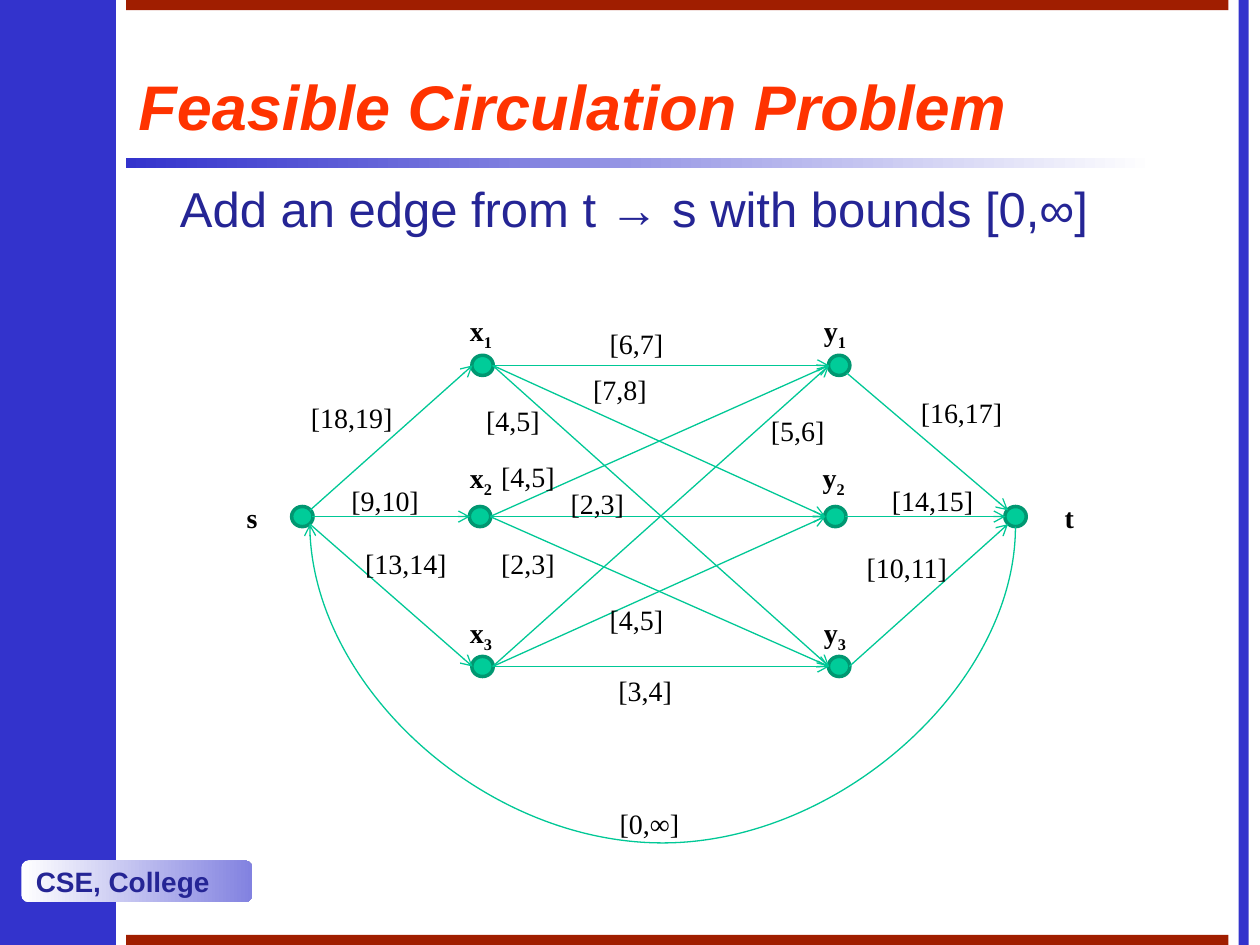
from typing import NamedTuple

from lxml.etree import SubElement
from pptx import Presentation
from pptx.dml.color import RGBColor
from pptx.enum.shapes import MSO_CONNECTOR as Connector, MSO_SHAPE as Shape
from pptx.enum.text import MSO_ANCHOR as Anchor, MSO_AUTO_SIZE as AutoSize, PP_ALIGN as Align
from pptx.oxml.ns import qn
from pptx.util import Inches, Pt

BLUE, RED, WHITE, NAVY = "3333CC", "A01E00", "FFFFFF", "252595"
NODE_WIDTH, NODE_HEIGHT = 0.17, 0.16


class Panel(NamedTuple):
    left: float
    top: float
    width: float
    height: float
    colors: tuple[str, ...]
    kind: Shape = Shape.RECTANGLE


class Style(NamedTuple):
    size: float
    font: str
    color: str
    bold: bool = False
    italic: bool = False


class Node(NamedTuple):
    x: float
    y: float
    name: str
    label_left: float
    label_top: float


class Edge(NamedTuple):
    source: str
    target: str
    exit: str = "right"
    entry: str = "left"


class Bound(NamedTuple):
    text: str
    left: float
    top: float
    width: float = 0.63


TITLE = Style(36, "Arial", "FF3300", True, True)
BODY = Style(28, "Arial", NAVY)
BADGE = Style(16, "Arial", NAVY, True)
BOUND = Style(16, "Times New Roman", "000000")
NAME = BOUND._replace(bold=True)

PANELS = [
    Panel(0, 0, 0.92, 7.5, (BLUE,)),
    Panel(1, 1.25, 8.17, 0.08, (BLUE, WHITE)),
    Panel(9.83, 0, 0.08, 7.5, (BLUE,)),
    Panel(1, 0, 8.75, 0.08, (RED,)),
    Panel(1, 7.42, 8.75, 0.08, (RED,)),
]
BADGE_PANEL = Panel(0.17, 6.83, 1.83, 0.33, (WHITE, "8282E0"), Shape.ROUNDED_RECTANGLE)

NODES = {
    node.name: node
    for node in [
        Node(2.4, 4.1, "s", 1.86, 3.92),
        Node(3.83, 2.9, "x1", 3.63, 2.44),
        Node(3.81, 4.1, "x2", 3.63, 3.61),
        Node(3.83, 5.29, "x3", 3.63, 4.84),
        Node(6.66, 2.9, "y1", 6.44, 2.44),
        Node(6.63, 4.1, "y2", 6.43, 3.61),
        Node(6.66, 5.29, "y3", 6.44, 4.84),
        Node(8.06, 4.1, "t", 8.35, 3.92),
    ]
}
PORTS = {
    "left": (-0.08, 0),
    "right": (0.08, 0),
    "upper left": (-0.06, -0.05),
    "upper right": (0.06, -0.05),
    "lower left": (-0.06, 0.06),
    "lower right": (0.06, 0.06),
}
EDGES = [
    Edge("s", "x1", "upper right"),
    Edge("s", "x2"),
    Edge("s", "x3", "lower right"),
    *(Edge(f"x{i}", f"y{j}") for i in (1, 2, 3) for j in (1, 2, 3)),
    Edge("y1", "t", "lower right", "upper left"),
    Edge("y2", "t"),
    Edge("y3", "t", "right", "lower left"),
]
BOUNDS = [
    Bound("[18,19]", 2.37, 3.13, 0.86),
    Bound("[9,10]", 2.69, 3.79, 0.75),
    Bound("[13,14]", 2.8, 4.29, 0.86),
    Bound("[16,17]", 7.21, 3.09, 0.86),
    Bound("[14,15]", 6.98, 3.79, 0.86),
    Bound("[10,11]", 6.78, 4.32, 0.86),
    Bound("[6,7]", 4.74, 2.54),
    Bound("[3,4]", 4.81, 5.3),
    Bound("[7,8]", 4.61, 2.91),
    Bound("[4,5]", 3.76, 3.15),
    Bound("[4,5]", 3.88, 3.6),
    Bound("[2,3]", 4.43, 3.81),
    Bound("[5,6]", 6.02, 3.23),
    Bound("[2,3]", 3.88, 4.29),
    Bound("[4,5]", 4.74, 4.73),
    Bound("[0,∞]", 4.82, 6.35, 0.7),
]


def rgb(color: str) -> RGBColor:
    return RGBColor.from_string(color)


def style_run(run, style: Style) -> None:
    font = run.font
    font.size, font.name = Pt(style.size), style.font
    font.bold, font.italic = style.bold, style.italic
    font.color.rgb = rgb(style.color)


def add_panel(slide, panel: Panel):
    shape = slide.shapes.add_shape(panel.kind, *map(Inches, panel[:4]))
    shape.shadow.inherit = False
    shape.line.fill.background()
    if len(panel.colors) == 1:
        shape.fill.solid()
        shape.fill.fore_color.rgb = rgb(panel.colors[0])
    else:
        shape.fill.gradient()
        shape.fill.gradient_angle = 0
        for stop, position, color in zip(shape.fill.gradient_stops, (0, 1), panel.colors):
            stop.position = position
            stop.color.rgb = rgb(color)
    return shape


def add_badge(slide, text: str) -> None:
    shape = add_panel(slide, BADGE_PANEL)
    shape.adjustments[0] = 0.167
    frame = shape.text_frame
    frame.text = text
    frame.word_wrap = False
    frame.vertical_anchor = Anchor.MIDDLE
    paragraph = frame.paragraphs[0]
    paragraph.alignment = Align.LEFT
    style_run(paragraph.runs[0], BADGE)


def add_text(slide, text: str, box: tuple, style: Style, wrap: bool = False):
    frame = slide.shapes.add_textbox(*map(Inches, box)).text_frame
    frame.text = text
    frame.word_wrap = wrap
    frame.auto_size = AutoSize.SHAPE_TO_FIT_TEXT
    style_run(frame.paragraphs[0].runs[0], style)
    return frame


def add_node(slide, node: Node) -> None:
    left, top = node.x - NODE_WIDTH / 2, node.y - NODE_HEIGHT / 2
    box = map(Inches, (left, top, NODE_WIDTH, NODE_HEIGHT))
    shape = slide.shapes.add_shape(Shape.OVAL, *box)
    shape.shadow.inherit = False
    shape.fill.solid()
    shape.fill.fore_color.rgb = rgb("00CC99")
    shape.line.color.rgb = rgb("009771")
    shape.line.width = Pt(2)


def add_node_name(slide, node: Node) -> None:
    letter, index = node.name[0], node.name[1:]
    box = (node.label_left, node.label_top, 0.39 if index else 0.29, 0.37)
    frame = add_text(slide, letter, box, NAME)
    if index:
        run = frame.paragraphs[0].add_run()
        run.text = index
        style_run(run, NAME)
        run.font._element.set("baseline", "-25000")


def add_arrow(slide, start: tuple, end: tuple, kind: Connector = Connector.STRAIGHT):
    arrow = slide.shapes.add_connector(kind, *map(Inches, (*start, *end)))
    arrow.line.color.rgb = rgb("00C896")
    arrow.line.width = Pt(0.75)
    SubElement(arrow.line._get_or_add_ln(), qn("a:tailEnd"), type="arrow")
    SubElement(arrow._element.spPr, qn("a:effectLst"))
    return arrow


def add_edge(slide, edge: Edge) -> None:
    ends = []
    for name, port in ((edge.source, edge.exit), (edge.target, edge.entry)):
        dx, dy = PORTS[port]
        ends.append((NODES[name].x + dx, NODES[name].y + dy))
    add_arrow(slide, *ends)


def add_return_edge(slide) -> None:
    properties = add_arrow(slide, (5.27, 1.37), (5.25, 6.97), Connector.CURVE)._element.spPr
    properties.find(qn("a:xfrm")).set("rot", "5400000")
    adjustments = properties.find(qn("a:prstGeom")).get_or_add_avLst()
    SubElement(adjustments, qn("a:gd"), name="adj1", fmla="val -12500000")


def main() -> None:
    presentation = Presentation()
    presentation.slide_width, presentation.slide_height = Inches(10), Inches(7.5)
    slide = presentation.slides.add_slide(presentation.slide_layouts[6])
    for panel in PANELS:
        add_panel(slide, panel)
    add_badge(slide, "CSE, College")
    for node in NODES.values():
        add_node(slide, node)
        add_node_name(slide, node)
    for edge in EDGES:
        add_edge(slide, edge)
    add_return_edge(slide)
    for text, left, top, width in BOUNDS:
        add_text(slide, text, (left, top, width, 0.37), BOUND)
    title = add_text(slide, "Feasible Circulation Problem", (1, 0.42, 8.8, 0.83), TITLE, True)
    title.auto_size = AutoSize.NONE
    title.vertical_anchor = Anchor.MIDDLE
    add_text(slide, "Add an edge from t → s with bounds [0,∞]", (1.33, 1.37, 8, 0.57), BODY, True)
    presentation.save("out.pptx")


if __name__ == "__main__":
    main()
